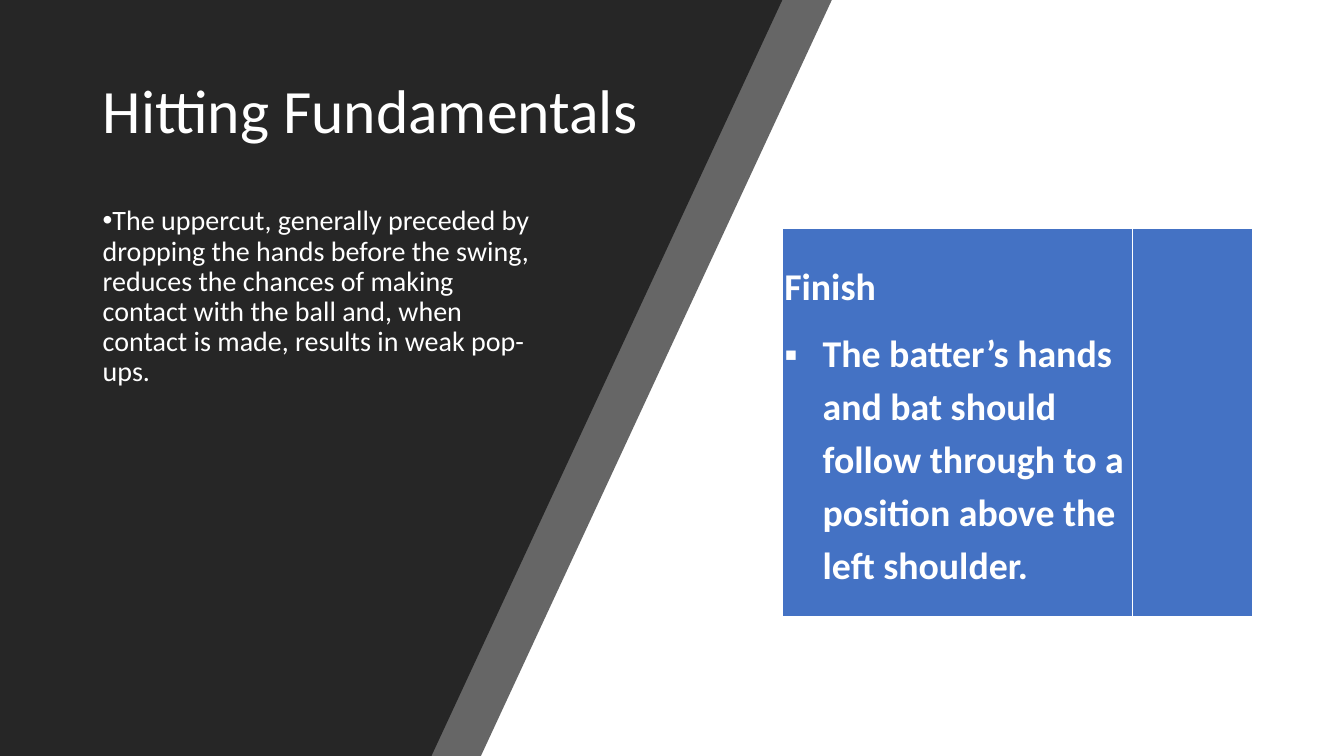
from dataclasses import dataclass

from lxml.etree import SubElement
from pptx import Presentation
from pptx.dml.color import RGBColor
from pptx.enum.shapes import MSO_SHAPE
from pptx.enum.text import MSO_ANCHOR
from pptx.oxml.ns import qn
from pptx.util import Inches, Pt


@dataclass(frozen=True)
class Theme:
    font: str = "Calibri"
    back: str = "000000"
    white: str = "FFFFFF"
    dark: str = "262626"
    blue: str = "4472C4"
    title: int = 44
    body: int = 20
    cell: int = 27


THEME = Theme()
WIDE, HIGH = 13.33, 7.5


def paint(fill, color):
    fill.solid()
    fill.fore_color.rgb = RGBColor.from_string(color)


def style(para, size, line, bold=False, before=0, after=0):
    para.line_spacing = line
    para.space_before = Pt(before)
    para.space_after = Pt(after)
    for run in para.runs:
        run.font.name = THEME.font
        run.font.size = Pt(size)
        run.font.bold = bold
        run.font.color.rgb = RGBColor.from_string(THEME.white)


def bullet(para, mark, left, hang, tab=None):
    props = para._p.get_or_add_pPr()
    props.set("marL", str(Inches(left)))
    props.set("indent", str(Inches(-hang)))
    SubElement(props, qn("a:buFont"), typeface="Arial")
    SubElement(props, qn("a:buChar"), char=mark)
    if tab:
        tabs = SubElement(props, qn("a:tabLst"))
        SubElement(tabs, qn("a:tab"), pos=str(Inches(tab)), algn="l")


def border(cell):
    props = cell._tc.get_or_add_tcPr()
    for side, width in (("L", 1), ("R", 1), ("T", 1), ("B", 3)):
        line = SubElement(props, qn(f"a:ln{side}"), w=str(Pt(width)))
        fill = SubElement(line, qn("a:solidFill"))
        SubElement(fill, qn("a:srgbClr"), val=THEME.white)


# Slanted panel from the left edge, wider at the top than at the foot
def panel(slide, box, foot, alpha=None):
    x, y, w, h = box
    points = [(x + w, y), (x, y), (x, y + h), (x + foot, y + h)]
    spots = [(Inches(a), Inches(b)) for a, b in points]
    build = slide.shapes.build_freeform(*spots[0], scale=1.0)
    build.add_line_segments(spots[1:], close=True)
    shape = build.convert_to_shape()
    shape.shadow.inherit = False
    paint(shape.fill, THEME.dark)
    shape.line.fill.background()
    if alpha:
        color = shape._element.spPr.find(qn("a:solidFill"))[0]
        SubElement(color, qn("a:alpha"), val=str(alpha * 1000))


# White page with the dark panel and its pale edge
def backdrop(slide, box):
    x, y, w, h = box
    paint(slide.background.fill, THEME.back)
    page = slide.shapes.add_shape(MSO_SHAPE.RECTANGLE, *map(Inches, box))
    page.shadow.inherit = False
    paint(page.fill, THEME.white)
    page.line.fill.background()
    panel(slide, (x, y, 8.25, h), 4.77, alpha=70)
    panel(slide, (x, y, 7.76, h), 4.28)


def text(slide, box, words, size, anchor, before=0):
    frame = slide.shapes.add_textbox(*map(Inches, box)).text_frame
    frame.word_wrap = True
    frame.vertical_anchor = anchor
    frame.text = words
    para = frame.paragraphs[0]
    style(para, size, 0.9, before=before)
    return para


# Title and bulleted remark on the dark panel
def story(slide, box):
    x, y, w, h = box
    text(slide, (x, y, w, 1.45), "Hitting Fundamentals",
         THEME.title, MSO_ANCHOR.MIDDLE)
    para = text(
        slide, (x, y + 1.6, 4.51, h - 1.6),
        "The uppercut, generally preceded by dropping the hands before "
        "the swing, reduces the chances of making contact with the ball "
        "and, when contact is made, results in weak pop-ups.",
        THEME.body, MSO_ANCHOR.TOP, before=10)
    bullet(para, "•", 0, 0.25)


# Two-column table with the finish of the swing
def finish(slide, box):
    x, y, w, h = box
    table = slide.shapes.add_table(1, 2, *map(Inches, box)).table
    table.first_row = table.horz_banding = False
    wide = 3.47
    for col, width in zip(table.columns, (wide, w - wide)):
        col.width = Inches(width)
    for cell in table.iter_cells():
        border(cell)
        paint(cell.fill, THEME.blue)
    cell = table.cell(0, 0)
    cell.vertical_anchor = MSO_ANCHOR.MIDDLE
    cell.margin_left = cell.margin_right = Inches(0.02)
    cell.margin_top = cell.margin_bottom = Inches(0.02)
    frame = cell.text_frame
    frame.text = ("Finish\nThe batter’s hands and bat should follow "
                  "through to a position above the left shoulder.")
    for para in frame.paragraphs:
        style(para, THEME.cell, 1.15, bold=True, after=10)
    bullet(frame.paragraphs[1], "▪", 0.38, 0.38, tab=0.5)


def main():
    deck = Presentation()
    deck.slide_width, deck.slide_height = Inches(WIDE), Inches(HIGH)
    slide = deck.slides.add_slide(deck.slide_layouts[6])
    backdrop(slide, (0, 0, WIDE, HIGH))
    story(slide, (0.92, 0.4, 6.05, 5.32))
    finish(slide, (7.76, 2.27, 4.66, 3.86))
    deck.save("out.pptx")


if __name__ == "__main__":
    main()
